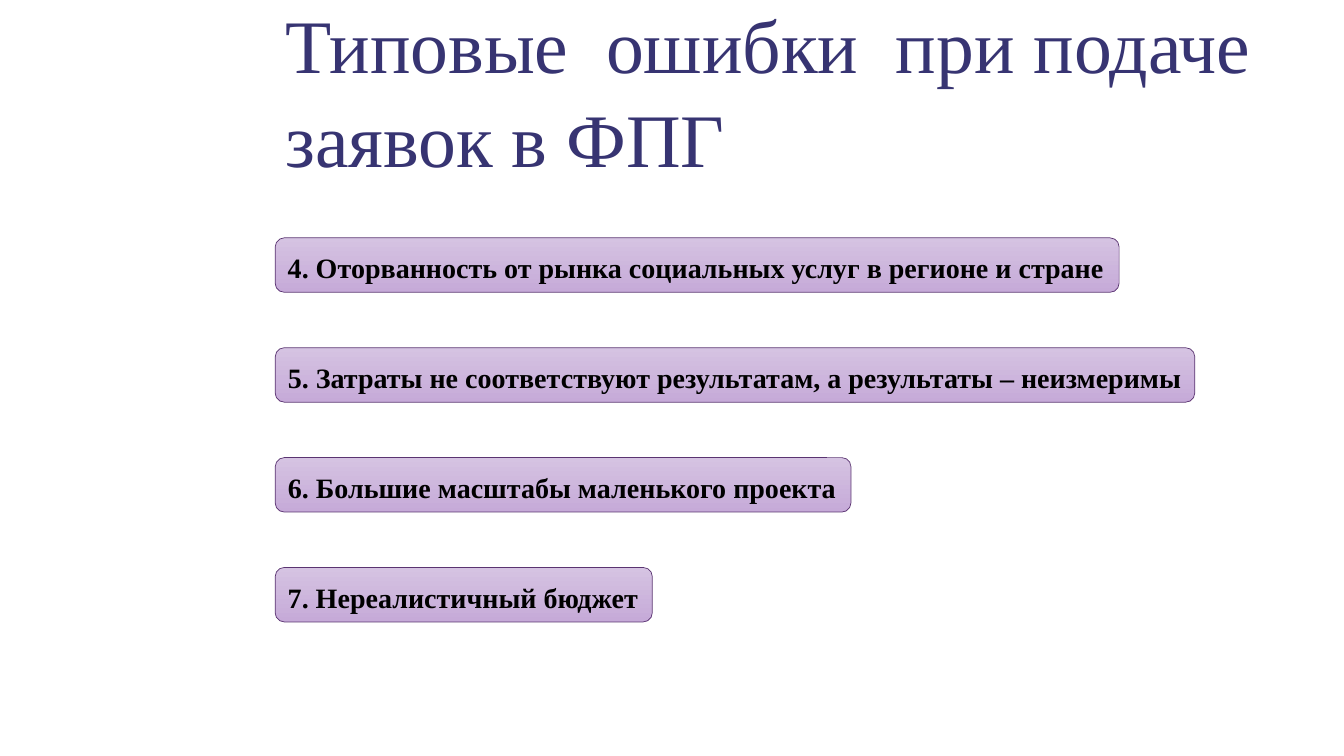
from pptx import Presentation
from pptx import util as u
from pptx.dml.color import RGBColor
from pptx.enum import shapes, text


def color(value):
    return RGBColor.from_string(value)


class SlideBuilder:
    font_name = "Times New Roman"
    title_color = "373472"
    text_color = "000000"
    line_color = "5A3471"
    gradient_colors = ("D5C3E2", "C6AAD8")

    def __init__(self, presentation):
        self.slide = presentation.slides.add_slide(presentation.slide_layouts[5])

    def format_runs(self, paragraph, size, font_color, bold):
        for run in paragraph.runs:
            run.font.name = self.font_name
            run.font.size = u.Pt(size)
            run.font.bold = bold
            run.font.color.rgb = color(font_color)

    def add_title(self, words, left, top, width, height):
        title = self.slide.shapes.title
        title.left, title.top = u.Inches(left), u.Inches(top)
        title.width, title.height = u.Inches(width), u.Inches(height)
        frame = title.text_frame
        frame.text = words
        frame.word_wrap = True
        frame.auto_size = text.MSO_AUTO_SIZE.NONE
        frame.vertical_anchor = text.MSO_ANCHOR.TOP
        paragraph = frame.paragraphs[0]
        paragraph.alignment = text.PP_ALIGN.LEFT
        paragraph.line_spacing = 1.04
        self.format_runs(paragraph, 54, self.title_color, False)

    def add_mistake(self, words, left, top, width, height):
        shape = self.slide.shapes.add_shape(
            shapes.MSO_SHAPE.ROUNDED_RECTANGLE,
            u.Inches(left), u.Inches(top), u.Inches(width), u.Inches(height))
        shape.shadow.inherit = False
        shape.fill.gradient()
        shape.fill.gradient_angle = 270
        for stop, position, value in zip(
                shape.fill.gradient_stops, (0, 1), self.gradient_colors):
            stop.position = position
            stop.color.rgb = color(value)
        shape.line.color.rgb = color(self.line_color)
        shape.line.width = u.Pt(0.5)
        frame = shape.text_frame
        frame.text = words
        frame.word_wrap = False
        frame.vertical_anchor = text.MSO_ANCHOR.MIDDLE
        paragraph = frame.paragraphs[0]
        paragraph.alignment = text.PP_ALIGN.LEFT
        paragraph.line_spacing = 1.15
        self.format_runs(paragraph, 20, self.text_color, True)


def main():
    presentation = Presentation()
    presentation.slide_width = u.Inches(13.33)
    presentation.slide_height = u.Inches(7.5)
    builder = SlideBuilder(presentation)
    left, first_top, step = 2.73, 2.36, 1.09
    builder.add_title("Типовые  ошибки  при подаче заявок в ФПГ",
                      left, -0.11, 10.48, 1.92)
    mistakes = [
        ("4. Оторванность от рынка социальных услуг в регионе и стране", 8.37),
        ("5. Затраты не соответствуют результатам, а результаты – неизмеримы", 9.12),
        ("6. Большие масштабы маленького проекта", 5.71),
        ("7. Нереалистичный бюджет", 3.74),
    ]
    for index, (words, width) in enumerate(mistakes):
        builder.add_mistake(words, left, first_top + index * step, width, 0.54)
    presentation.save("out.pptx")


if __name__ == "__main__":
    main()
